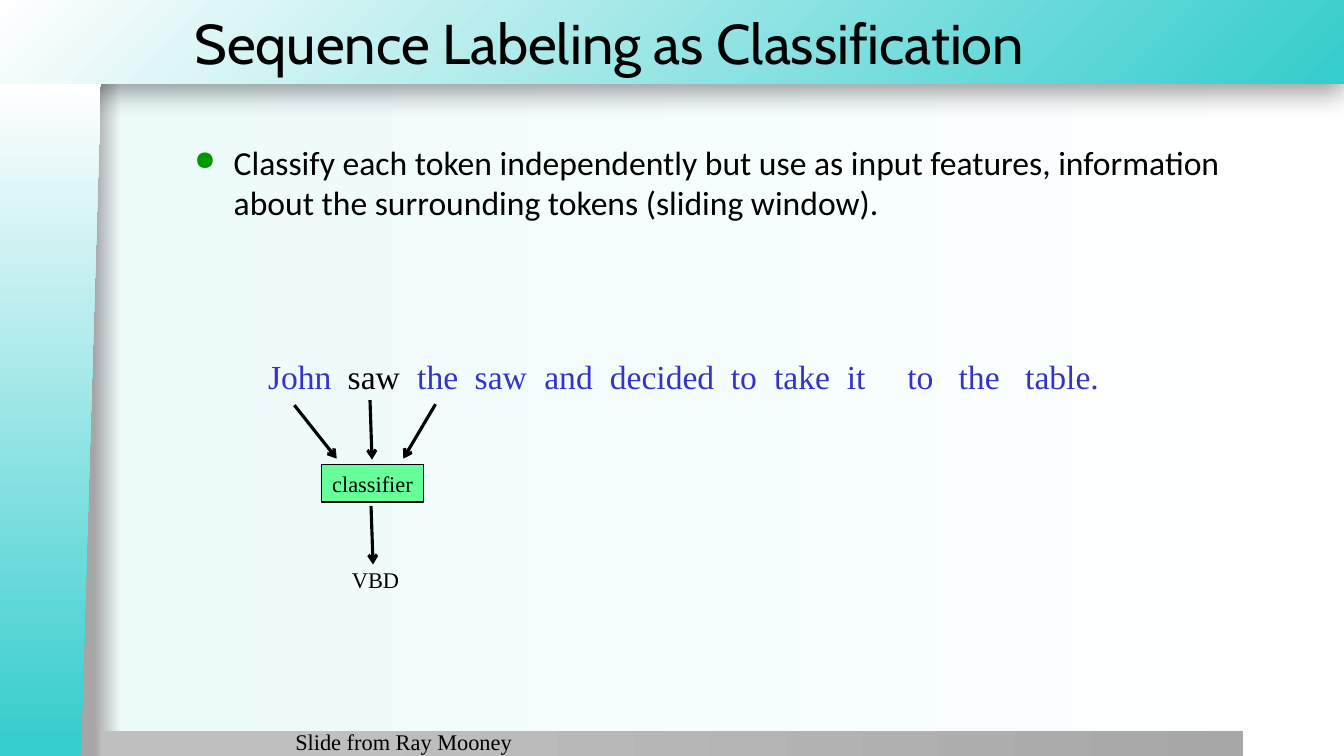
from lxml.etree import SubElement
from pptx import Presentation
from pptx.dml.color import RGBColor
from pptx.enum.shapes import MSO_CONNECTOR as CONNECTOR, MSO_SHAPE as SHAPE
from pptx.enum.text import MSO_ANCHOR as ANCHOR, PP_ALIGN as ALIGN
from pptx.oxml.ns import qn
from pptx.util import Pt

PX = 9144
BLACK, BLUE = "000000", "3333CC"
SERIF = "Times New Roman"

deck = Presentation()
deck.slide_width, deck.slide_height = 1333 * PX, 750 * PX
slide = deck.slides.add_slide(deck.slide_layouts[6])


def gradient(fill, element, stops, **focus):
    fill.gradient()
    grad = element.find(".//" + qn("a:gradFill"))
    for part in list(grad):
        grad.remove(part)
    grad.set("rotWithShape", "1")
    stop_list = SubElement(grad, qn("a:gsLst"))
    for percent, colour in stops:
        stop = SubElement(stop_list, qn("a:gs"), pos=str(percent * 1000))
        SubElement(stop, qn("a:srgbClr"), val=colour)
    if focus:
        circle = SubElement(grad, qn("a:path"), path="circle")
        SubElement(circle, qn("a:fillToRect"), **focus)
    else:
        SubElement(grad, qn("a:lin"), ang="0", scaled="0")


def write(shape, runs, size, font, wrap=True, anchor=ANCHOR.TOP, align=ALIGN.LEFT):
    frame = shape.text_frame
    for name, value in {"word_wrap": wrap, "vertical_anchor": anchor}.items():
        setattr(frame, name, value)
    paragraph = frame.paragraphs[0]
    paragraph.alignment = align
    for text, colour in runs:
        run = paragraph.add_run()
        run.text = text
        for name, value in {"size": Pt(size), "name": font}.items():
            setattr(run.font, name, value)
        run.font.color.rgb = RGBColor.from_string(colour)
    return paragraph


gradient(slide.background.fill, slide.element,
         [(7, "A6A6A6"), (9, "EDFBFB"), (100, "FFFFFF")])

bands = [
    (SHAPE.RECTANGLE, (-1, 0, 1334, 83), [(0, "34CCCC"), (100, "FFFFFF")],
     {"l": "100000", "t": "100000"}),
    (SHAPE.RECTANGLE, (100, 725, 1133, 26), [(20, "BFBFBF"), (100, "A7A7A7")], {}),
    (SHAPE.FLOWCHART_MANUAL_INPUT, (-284, 367, 668, 100),
     [(1, "34CCCC"), (100, "FFFFFF")], {}),
]
drawn_bands = []
for kind, box, stops, focus in bands:
    band = slide.shapes.add_shape(kind, *(n * PX for n in box))
    band.shadow.inherit = False
    band.line.fill.background()
    gradient(band.fill, band._element, stops, **focus)
    drawn_bands.append(band)

header, footer, side = drawn_bands
side.rotation = 270
side._element.spPr.find(qn("a:xfrm")).set("flipV", "1")
effects = header._element.spPr.find(qn("a:effectLst"))
shadow = SubElement(effects, qn("a:outerShdw"), blurRad=str(Pt(20)), dist=str(Pt(6)),
                    dir="5400000", algn="t", rotWithShape="0")
shade = SubElement(shadow, qn("a:srgbClr"), val=BLACK)
SubElement(shade, qn("a:alpha"), val="40000")

labels = [
    ((183, 0, 1150, 83), "Sequence Labeling as Classification", 40, "Cabin",
     {"anchor": ANCHOR.MIDDLE}),
    ((339, 557, 67, 37), "VBD", 16, SERIF, {"wrap": False, "align": ALIGN.CENTER}),
    ((283, 717, 342, 25), "Slide from Ray Mooney", 16, SERIF, {}),
]
for box, text, size, font, layout in labels:
    label = slide.shapes.add_textbox(*(n * PX for n in box))
    write(label, [(text, BLACK)], size, font, **layout)

body = slide.shapes.add_textbox(*(n * PX for n in (183, 136, 1050, 579)))
point = write(body, [("Classify each token independently but use as input features, "
                      "information about the surrounding tokens (sliding window).",
                      BLACK)], 24, "Calibri")
point.space_before = Pt(4.8)
bullet = point._p.get_or_add_pPr()
for name, value in {"marL": 39, "indent": -39}.items():
    bullet.set(name, str(value * PX))
SubElement(SubElement(bullet, qn("a:buClr")), qn("a:srgbClr"), val="009900")
SubElement(bullet, qn("a:buSzPct"), val="80000")
SubElement(bullet, qn("a:buChar"), char="●")

sentence = slide.shapes.add_textbox(*(n * PX for n in (256, 348, 851, 51)))
tokens = write(sentence, [
    ("John\t", BLUE), ("saw\t", BLACK),
    ("the\tsaw\tand\tdecided\tto\ttake\tit\tto\tthe\ttable.", BLUE)], 24, SERIF)
token_stops = SubElement(tokens._p.get_or_add_pPr(), qn("a:tabLst"))
for offset in (79, 148, 205, 274, 339, 459, 502, 574, 634, 685, 751):
    SubElement(token_stops, qn("a:tab"), pos=str(offset * PX), algn="l")

classifier = slide.shapes.add_shape(SHAPE.RECTANGLE, *(n * PX for n in (319, 461, 101, 37)))
classifier.shadow.inherit = False
classifier.fill.solid()
classifier.fill.fore_color.rgb = RGBColor.from_string("66FF99")
classifier.line.color.rgb = RGBColor.from_string(BLACK)
classifier.line.width = Pt(1)
write(classifier, [("classifier", BLACK)], 16, SERIF, wrap=False,
      anchor=ANCHOR.MIDDLE, align=ALIGN.CENTER)

for ends in [(292, 402, 334, 455), (432, 401, 400, 455),
             (367, 397, 369, 456), (368, 502, 370, 560)]:
    arrow = slide.shapes.add_connector(CONNECTOR.STRAIGHT, *(n * PX for n in ends))
    arrow.line.color.rgb = RGBColor.from_string(BLACK)
    arrow.line.width = Pt(2.25)
    SubElement(arrow.line._get_or_add_ln(), qn("a:tailEnd"), type="arrow")
    SubElement(arrow._element.spPr, qn("a:effectLst"))

deck.save("out.pptx")
